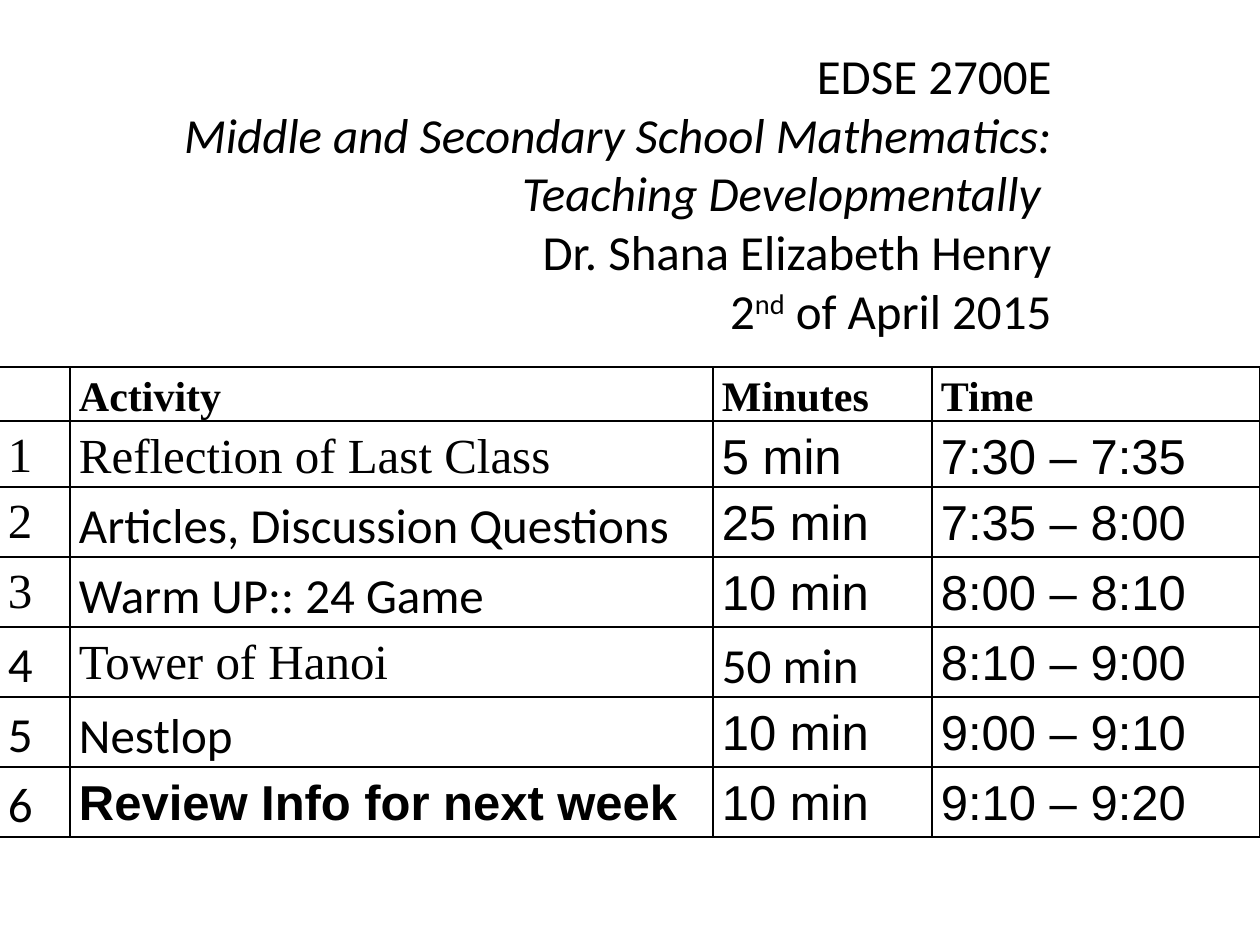
"""Build the class agenda slide: a course heading above a timetable."""
from dataclasses import dataclass

from lxml.etree import SubElement
from pptx import Presentation
from pptx.dml.color import RGBColor
from pptx.enum.text import MSO_ANCHOR, MSO_AUTO_SIZE, PP_ALIGN
from pptx.oxml.ns import qn
from pptx.util import Emu, Pt

PX = 914400 / 126
INK = "000000"
SANS, SERIF, PLAIN = "Calibri", "Times New Roman", "Arial"


@dataclass(frozen=True)
class Span:
    """A piece of text with one look."""
    text: str
    font: str = SANS
    size: int = 28
    bold: bool = False
    italic: bool = False
    raised: bool = False


@dataclass(frozen=True)
class Activity:
    """One numbered line of the agenda."""
    number: Span
    activity: Span
    minutes: Span
    time: Span

    def spans(self) -> list[Span]:
        """Return the spans in column order."""
        return [self.number, self.activity, self.minutes, self.time]


HEADING = [
    [Span("EDSE 2700E")],
    [Span("Middle and Secondary School Mathematics: Teaching Developmentally ", italic=True)],
    [Span("Dr. Shana Elizabeth Henry")],
    [Span("2"), Span("nd", raised=True), Span(" of April 2015")],
]
COLUMN_TITLES = [None] + [Span(title, SERIF, 24, bold=True)
                          for title in ("Activity", "Minutes", "Time")]
AGENDA = [
    Activity(Span("1", SERIF), Span("Reflection of Last Class", SERIF),
             Span("5 min", PLAIN), Span("7:30 – 7:35", PLAIN)),
    Activity(Span("2", SERIF), Span("Articles, Discussion Questions"),
             Span("25 min", PLAIN), Span("7:35 – 8:00", PLAIN)),
    Activity(Span("3", SERIF), Span("Warm UP:: 24 Game"),
             Span("10 min", PLAIN), Span("8:00 – 8:10", PLAIN)),
    Activity(Span("4"), Span("Tower of Hanoi", SERIF),
             Span("50 min"), Span("8:10 – 9:00", PLAIN)),
    Activity(Span("5"), Span("Nestlop"),
             Span("10 min", PLAIN), Span("9:00 – 9:10", PLAIN)),
    Activity(Span("6"), Span("Review Info for next week", PLAIN, bold=True),
             Span("10 min", PLAIN), Span("9:10 – 9:20", PLAIN)),
]
COLUMN_WIDTHS = [71, 643, 219, 328]
ROW_HEIGHTS = [54, 66, 70, 70, 70, 70, 70]


def px(length: int) -> Emu:
    """Turn pixels into EMU."""
    return Emu(round(length * PX))


def colour(value: str) -> RGBColor:
    """Turn a hex string into a colour."""
    return RGBColor.from_string(value)


def add_span(paragraph, span: Span) -> None:
    """Add one formatted run to a paragraph."""
    run = paragraph.add_run()
    run.text = span.text
    run.font.name = span.font
    run.font.size = Pt(span.size)
    run.font.bold = span.bold
    run.font.italic = span.italic
    run.font.color.rgb = colour(INK)
    if span.raised:
        run.font._element.set("baseline", "30000")


def fill_heading(heading) -> None:
    """Place the title and write its lines flush right."""
    heading.left, heading.top, heading.width, heading.height = map(px, (64, 39, 1000, 386))
    frame = heading.text_frame
    frame.word_wrap = True
    frame.auto_size = MSO_AUTO_SIZE.NONE
    frame.vertical_anchor = MSO_ANCHOR.TOP
    for index, spans in enumerate(HEADING):
        paragraph = frame.add_paragraph() if index else frame.paragraphs[0]
        paragraph.alignment = PP_ALIGN.RIGHT
        for span in spans:
            add_span(paragraph, span)


def outline(cell) -> None:
    """Give a cell a thin border on every side."""
    properties = cell._tc.get_or_add_tcPr()
    for side in ("lnL", "lnR", "lnT", "lnB"):
        line = SubElement(properties, qn(f"a:{side}"), w=str(Pt(1)))
        SubElement(SubElement(line, qn("a:solidFill")), qn("a:srgbClr"), val=INK)


def fill_cell(cell, span: Span | None, top: int) -> None:
    """Write one agenda cell."""
    outline(cell)
    cell.fill.background()
    cell.margin_left = cell.margin_right = px(9)
    cell.margin_top, cell.margin_bottom = px(top), px(0)
    cell.vertical_anchor = MSO_ANCHOR.TOP
    if span:
        paragraph = cell.text_frame.paragraphs[0]
        paragraph.line_spacing = 1.15
        add_span(paragraph, span)


def add_agenda(slide) -> None:
    """Add the timetable."""
    rows = [COLUMN_TITLES] + [activity.spans() for activity in AGENDA]
    agenda = slide.shapes.add_table(
        len(rows), len(COLUMN_WIDTHS), px(-1), px(367),
        px(sum(COLUMN_WIDTHS)), px(sum(ROW_HEIGHTS))).table
    agenda.first_row = agenda.horz_banding = False
    for column, width in zip(agenda.columns, COLUMN_WIDTHS):
        column.width = px(width)
    for row_index, (spans, height) in enumerate(zip(rows, ROW_HEIGHTS)):
        agenda.rows[row_index].height = px(height)
        for column_index, span in enumerate(spans):
            top = 1 if row_index and column_index else 0
            fill_cell(agenda.cell(row_index, column_index), span, top)


def main() -> None:
    """Build and save the slide."""
    deck = Presentation()
    deck.slide_width, deck.slide_height = px(1260), px(945)
    slide = deck.slides.add_slide(deck.slide_layouts[5])
    add_agenda(slide)
    fill_heading(slide.shapes.title)
    deck.save("out.pptx")


if __name__ == "__main__":
    main()
